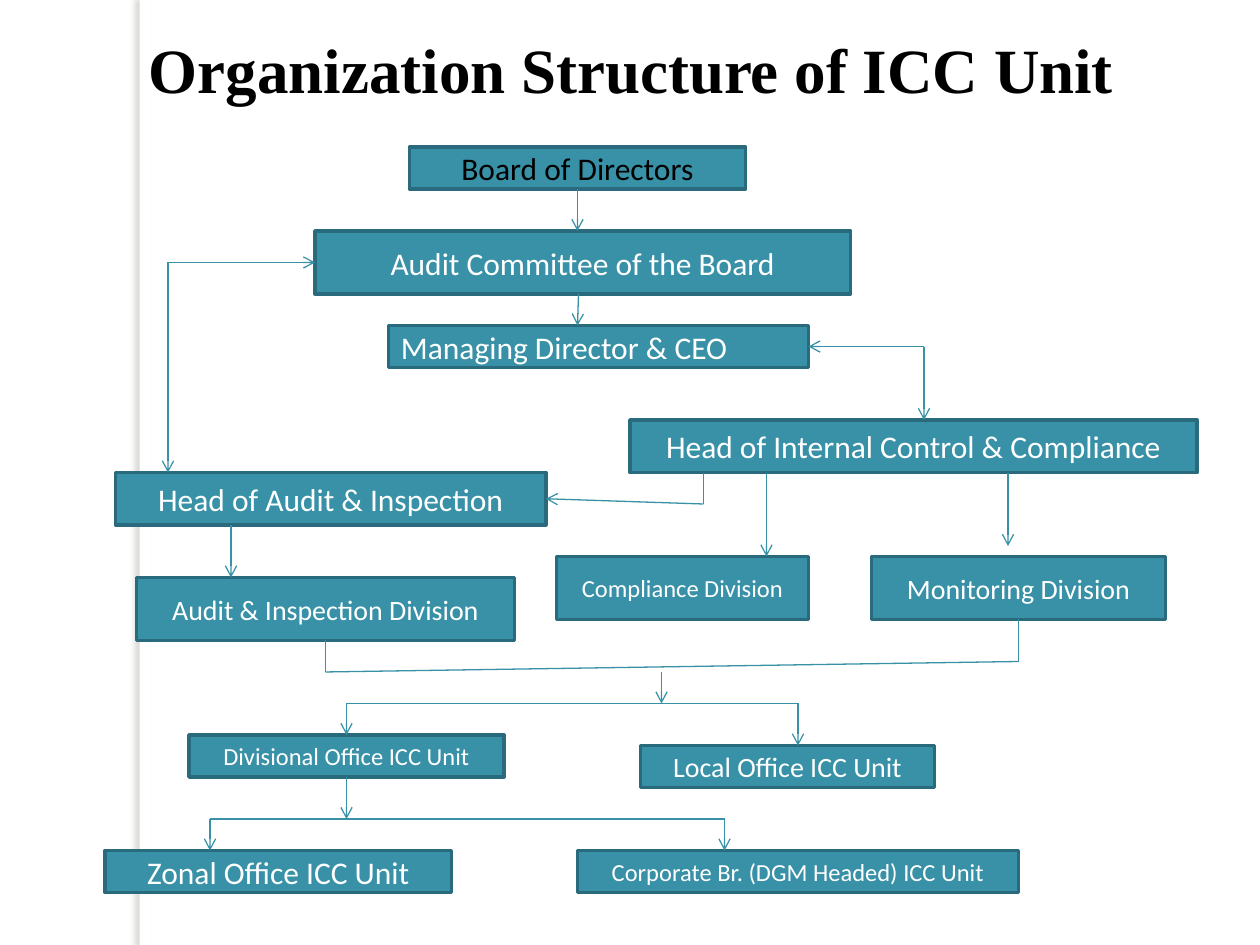
import pptx
import pptx.util
import pptx.dml.color
import pptx.enum.shapes
import pptx.enum.text
import pptx.oxml
import pptx.oxml.ns
from dataclasses import dataclass


@dataclass(frozen=True)
class Theme:
    teal: str = "3891A7"
    border: str = "296B7C"
    white: str = "FFFFFF"
    black: str = "000000"
    shade: str = "736F63"
    title_font: str = "Times New Roman"
    body_font: str = "Calibri"
    title: int = 36
    large: int = 18
    medium: int = 16
    small: int = 14


theme = Theme()
PX = 914400 // 120  # 120 px to the inch
ALIGN = pptx.enum.text.PP_ALIGN
RECTANGLE = pptx.enum.shapes.MSO_SHAPE.RECTANGLE
STRAIGHT = pptx.enum.shapes.MSO_CONNECTOR.STRAIGHT
NAMESPACE = pptx.oxml.ns.nsdecls("a")


def color(value):
    return pptx.dml.color.RGBColor.from_string(value)


def write(box, text, size, font, ink, align, bold=False):
    frame = box.text_frame
    frame.word_wrap = True
    frame.vertical_anchor = pptx.enum.text.MSO_ANCHOR.MIDDLE
    para = frame.paragraphs[0]
    para.alignment = align
    span = para.add_run()
    span.text = text
    span.font.size = pptx.util.Pt(size)
    span.font.name = font
    span.font.bold = bold
    span.font.color.rgb = color(ink)


deck = pptx.Presentation()
deck.slide_width, deck.slide_height = 1200 * PX, 900 * PX
page = deck.slides.add_slide(deck.slide_layouts[6])

# Side strip with a soft shadow to its left
strip = page.shapes.add_shape(RECTANGLE, 133 * PX, 0, 10 * PX, 900 * PX)
strip.fill.solid()
strip.fill.fore_color.rgb = color(theme.white)
strip.line.fill.background()
strip._element.spPr.append(pptx.oxml.parse_xml(
    f'<a:effectLst {NAMESPACE}><a:outerShdw blurRad="38100" dist="38100" dir="10800000">'
    f'<a:srgbClr val="{theme.shade}"><a:alpha val="25000"/></a:srgbClr>'
    f'</a:outerShdw></a:effectLst>'))

# Title
title = page.shapes.add_textbox(130 * PX, 30 * PX, 1070 * PX, 70 * PX)
write(title, "Organization Structure of ICC Unit", theme.title, theme.title_font,
      theme.black, ALIGN.LEFT, bold=True)

# Units: text, left, top, width, height, type size, ink, alignment
units = [
    ("Board of Directors", 390, 140, 320, 40, theme.large, theme.black, ALIGN.CENTER),
    ("Audit Committee of the Board", 300, 220, 510, 60, theme.large, theme.white, ALIGN.CENTER),
    ("Managing Director & CEO", 370, 310, 400, 40, theme.large, theme.white, ALIGN.LEFT),
    ("Head of Internal Control & Compliance", 600, 400, 540, 50, theme.large, theme.white,
     ALIGN.CENTER),
    ("Head of Audit & Inspection", 110, 450, 410, 50, theme.large, theme.white, ALIGN.CENTER),
    ("Compliance Division", 530, 530, 240, 60, theme.small, theme.white, ALIGN.CENTER),
    ("Monitoring Division", 830, 530, 280, 60, theme.medium, theme.white, ALIGN.CENTER),
    ("Audit & Inspection Division", 130, 550, 360, 60, theme.medium, theme.white, ALIGN.CENTER),
    ("Divisional Office ICC Unit", 180, 700, 300, 40, theme.small, theme.white, ALIGN.CENTER),
    ("Local Office ICC Unit", 610, 710, 280, 40, theme.medium, theme.white, ALIGN.CENTER),
    ("Zonal Office ICC Unit", 100, 810, 330, 40, theme.large, theme.white, ALIGN.CENTER),
    ("Corporate Br. (DGM Headed) ICC Unit", 550, 810, 420, 40, theme.small, theme.white,
     ALIGN.CENTER),
]
joints = {}  # middle of each side -> (box, connection site)
for text, left, top, width, height, size, ink, align in units:
    box = page.shapes.add_shape(RECTANGLE, left * PX, top * PX, width * PX, height * PX)
    box.shadow.inherit = False
    box.fill.solid()
    box.fill.fore_color.rgb = color(theme.teal)
    box.line.color.rgb = color(theme.border)
    box.line.width = pptx.util.Pt(2)
    write(box, text, size, theme.body_font, ink, align)
    center, middle = left + width // 2, top + height // 2
    sides = [(center, top), (left, middle), (center, top + height), (left + width, middle)]
    for site, point in enumerate(sides):
        joints[point] = (box, site)

# Links: start, end, arrowhead at the end
links = [
    # Board to chief executive
    ((550, 180), (550, 220), True),
    ((551, 280), (550, 310), True),
    # Chief executive and head of control
    ((880, 330), (770, 330), True),
    ((880, 330), (880, 400), True),
    # Audit committee and head of audit
    ((160, 250), (300, 250), True),
    ((160, 250), (160, 450), True),
    # Heads to divisions
    ((670, 450), (670, 480), False),
    ((670, 480), (520, 475), True),
    ((220, 500), (220, 550), True),
    ((730, 450), (730, 530), True),
    ((960, 450), (960, 520), True),
    # Divisions to offices
    ((310, 610), (310, 640), False),
    ((970, 590), (970, 630), False),
    ((310, 640), (970, 630), False),
    ((630, 640), (630, 670), True),
    ((330, 670), (760, 670), False),
    ((330, 670), (330, 700), True),
    ((760, 670), (760, 710), True),
    # Divisional office to its units
    ((330, 740), (330, 780), True),
    ((200, 780), (690, 780), False),
    ((200, 780), (200, 810), True),
    ((690, 780), (690, 810), True),
]
for start, end, arrow in links:
    link = page.shapes.add_connector(STRAIGHT, *(value * PX for value in start + end))
    if start in joints:
        link.begin_connect(*joints[start])
    if end in joints:
        link.end_connect(*joints[end])
    link.line.color.rgb = color(theme.teal)
    link.line.width = pptx.util.Pt(0.75)
    properties = link._element.spPr
    if arrow:
        outline = properties.find(pptx.oxml.ns.qn("a:ln"))
        outline.append(pptx.oxml.parse_xml(f'<a:tailEnd {NAMESPACE} type="arrow"/>'))
    properties.append(pptx.oxml.parse_xml(f"<a:effectLst {NAMESPACE}/>"))

deck.save("out.pptx")
